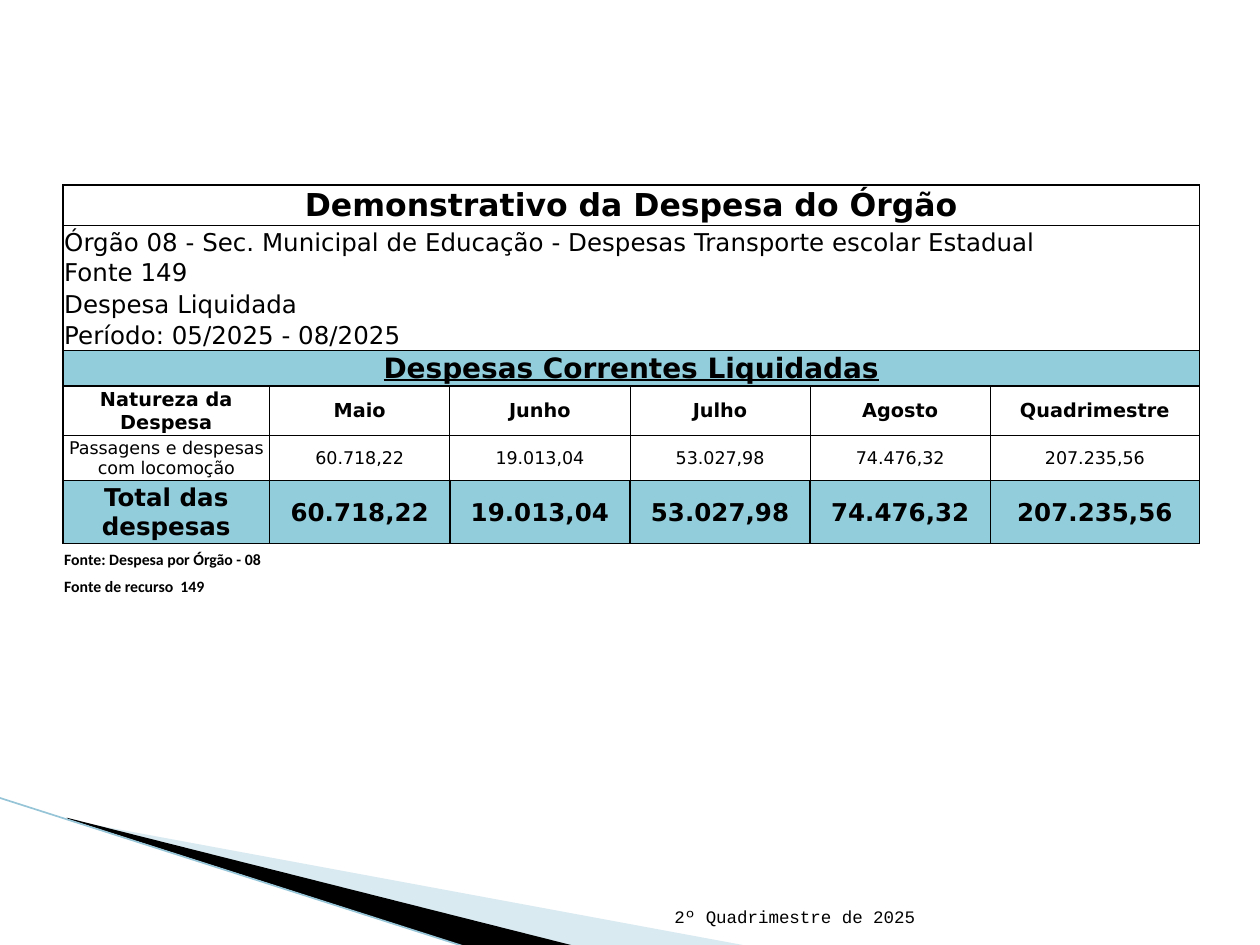
from dataclasses import dataclass

from lxml import etree
from pptx import Presentation
from pptx.dml.color import RGBColor
from pptx.enum.shapes import MSO_CONNECTOR
from pptx.enum.text import MSO_ANCHOR, PP_ALIGN
from pptx.oxml.ns import qn
from pptx.util import Inches, Pt

STRAIGHT = MSO_CONNECTOR.STRAIGHT
TOP, MIDDLE, BOTTOM = MSO_ANCHOR.TOP, MSO_ANCHOR.MIDDLE, MSO_ANCHOR.BOTTOM
LEFT, CENTER, RIGHT = PP_ALIGN.LEFT, PP_ALIGN.CENTER, PP_ALIGN.RIGHT


@dataclass(frozen=True)
class Theme:
    ink: str = "000000"
    paper: str = "FFFFFF"
    band: str = "92CDDC"
    wedge: str = "A0CBDC"
    edge: str = "97C5D8"
    table_font: str = "DejaVu Sans"
    source_font: str = "Calibri"
    period_font: str = "Courier New"
    title: int = 18
    section: int = 16
    body: int = 14
    heading: int = 11
    detail: int = 10
    source: int = 9
    thick: float = 1
    thin: float = 0.5


THEME = Theme()
COLUMNS = [1.64, 1.43, 1.43, 1.43, 1.43, 1.66]
AMOUNTS = ["60.718,22", "19.013,04", "53.027,98", "74.476,32", "207.235,56"]
AGENCY_LINES = [
    ("Órgão 08 - Sec. Municipal de Educação - Despesas Transporte escolar Estadual", 0.25, BOTTOM),
    ("Fonte 149", 0.25, MIDDLE),
    ("Despesa Liquidada", 0.25, MIDDLE),
    ("Período: 05/2025 - 08/2025", 0.24, TOP),
]


def write_text(frame, text, font=THEME.table_font, size=THEME.body, bold=False,
               underline=False, align=LEFT):
    paragraph = frame.paragraphs[0]
    paragraph.alignment = align
    if not text:
        etree.SubElement(paragraph._p, qn("a:endParaRPr"), sz=str(size * 100))
        return
    run = paragraph.add_run()
    run.text = text
    run.font.name = font
    run.font.size = Pt(size)
    run.font.bold = bold
    run.font.underline = underline
    run.font.color.rgb = RGBColor.from_string(THEME.ink)


def set_borders(cell, left, right, top, bottom):
    properties = cell._tc.get_or_add_tcPr()
    for side, weight in zip("LRTB", (left, right, top, bottom)):
        border = etree.SubElement(properties, qn(f"a:ln{side}"), w=str(Pt(weight)))
        if weight:
            fill = etree.SubElement(border, qn("a:solidFill"))
            etree.SubElement(fill, qn("a:srgbClr"), val=THEME.ink)
        else:
            etree.SubElement(border, qn("a:noFill"))


def format_cell(cell, text, borders, fill=THEME.paper, anchor=MIDDLE, **text_format):
    set_borders(cell, *borders)
    cell.fill.solid()
    cell.fill.fore_color.rgb = RGBColor.from_string(fill)
    cell.margin_left = cell.margin_right = cell.margin_top = Inches(0.01)
    cell.margin_bottom = 0
    cell.vertical_anchor = anchor
    write_text(cell.text_frame, text, **text_format)


def fill_row(table, index, texts, outer, inner, top, bottom, merged=False, **cell_format):
    last = len(COLUMNS) - 1
    cells = [table.cell(index, column) for column in range(last + 1)]
    if merged:
        cells[0].merge(cells[last])
    texts = texts + [""] * (last + 1 - len(texts))
    for column, (cell, text) in enumerate(zip(cells, texts)):
        borders = (inner if column else outer, inner if column < last else outer, top, bottom)
        if merged:
            borders = (outer, outer, top, bottom)
        format_cell(cell, text, borders, **cell_format)


def expense_rows():
    thick, thin = THEME.thick, THEME.thin
    boxed = dict(outer=thick, inner=thick, top=thick, bottom=thick)
    yield 0.32, ["Demonstrativo da Despesa do Órgão"], dict(
        boxed, merged=True, size=THEME.title, bold=True, align=CENTER)
    for number, (line, height, anchor) in enumerate(AGENCY_LINES):
        yield height, [line], dict(
            boxed, merged=True, anchor=anchor,
            top=0 if number else thick,
            bottom=thick if number == len(AGENCY_LINES) - 1 else 0)
    yield 0.28, ["Despesas Correntes Liquidadas"], dict(
        boxed, merged=True, fill=THEME.band, size=THEME.section, bold=True,
        underline=True, align=CENTER)
    yield 0.39, ["Natureza da Despesa", "Maio", "Junho", "Julho", "Agosto", "Quadrimestre"], dict(
        boxed, inner=thin, bottom=thin, size=THEME.heading, bold=True, align=CENTER)
    yield 0.36, ["Passagens e despesas com locomoção"] + AMOUNTS, dict(
        boxed, inner=thin, top=thin, size=THEME.detail, align=CENTER)
    yield 0.5, ["Total das despesas"] + AMOUNTS, dict(
        boxed, fill=THEME.band, bold=True, align=CENTER)
    for source, top in (("Fonte: Despesa por Órgão - 08", thick), ("Fonte de recurso  149", 0)):
        yield 0.21, [source], dict(
            outer=0, inner=0, top=top, bottom=0, anchor=BOTTOM,
            font=THEME.source_font, size=THEME.source, bold=True)


def add_expense_table(slide, left, top, width, height):
    rows = list(expense_rows())
    table = slide.shapes.add_table(len(rows), len(COLUMNS), left, top, width, height).table
    table.first_row = table.horz_banding = False
    for column, column_width in zip(table.columns, COLUMNS):
        column.width = Inches(column_width)
    for index, (row_height, texts, row_format) in enumerate(rows):
        table.rows[index].height = Inches(row_height)
        fill_row(table, index, texts, **row_format)


def add_wedge(slide, left, top, offsets, color, opacity=100):
    points = [(left + Inches(x), top + Inches(y)) for x, y in offsets]
    builder = slide.shapes.build_freeform(*points[0])
    builder.add_line_segments(points[1:], close=True)
    wedge = builder.convert_to_shape()
    wedge.shadow.inherit = False
    wedge.line.fill.background()
    wedge.fill.solid()
    wedge.fill.fore_color.rgb = RGBColor.from_string(color)
    if opacity < 100:
        tint = wedge._element.spPr.find(f".//{qn('a:srgbClr')}")
        etree.SubElement(tint, qn("a:alpha"), val=str(opacity * 1000))


def add_corner(slide, left, top, width, height):
    add_wedge(slide, left, top, [(0.56, 0.18), (5.96, 1.18), (4.57, 1.18), (0.56, 0.17)],
              THEME.wedge, opacity=40)
    add_wedge(slide, left, top, [(0.54, 0.16), (4.58, 1.18), (3.73, 1.19), (0.55, 0.17)],
              THEME.ink)
    edge = slide.shapes.add_connector(STRAIGHT, left, top, left + width, top + height)
    edge.line.color.rgb = RGBColor.from_string(THEME.edge)
    edge.line.width = Pt(0.95)
    etree.SubElement(edge._element.spPr, qn("a:effectLst"))


def add_period(slide, left, top, width, height):
    frame = slide.shapes.add_textbox(left, top, width, height).text_frame
    frame.word_wrap = True
    frame.vertical_anchor = BOTTOM
    write_text(frame, "2º Quadrimestre de 2025", font=THEME.period_font,
               size=THEME.detail, align=RIGHT)


def main():
    deck = Presentation()
    deck.slide_width, deck.slide_height = Inches(10), Inches(7.5)
    slide = deck.slides.add_slide(deck.slide_layouts[6])
    add_corner(slide, Inches(-0.01), Inches(6.33), Inches(3.72), Inches(1.19))
    add_period(slide, Inches(4.79), Inches(7.01), Inches(2.57), Inches(0.4))
    add_expense_table(slide, Inches(0.5), Inches(1.47), Inches(9), Inches(3.24))
    deck.save("out.pptx")


if __name__ == "__main__":
    main()
